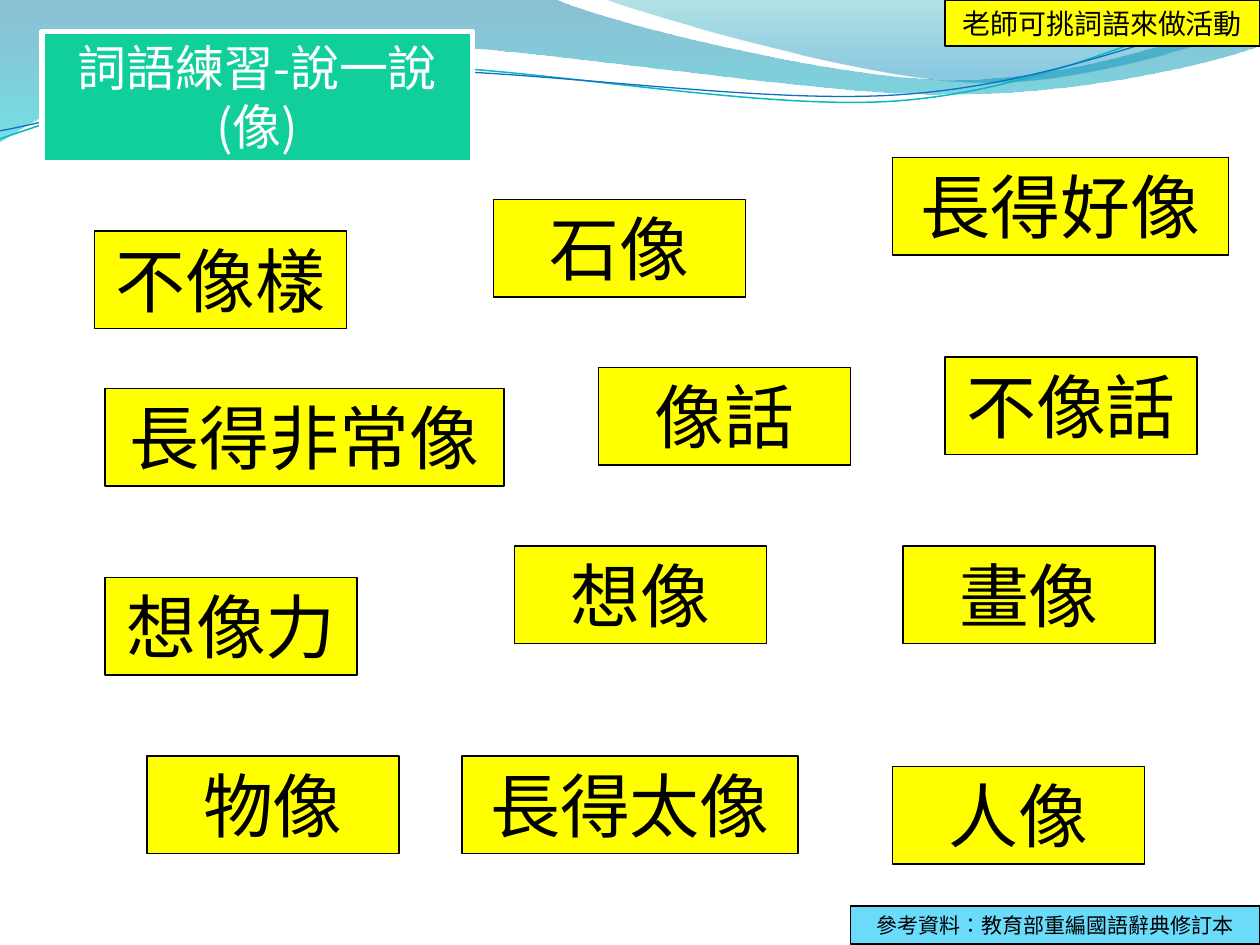
from lxml.etree import SubElement
from pptx import Presentation
from pptx.dml.color import RGBColor
from pptx.enum.shapes import MSO_SHAPE
from pptx.enum.text import MSO_ANCHOR, MSO_AUTO_SIZE, PP_ALIGN
from pptx.oxml.ns import qn
from pptx.util import Pt

PX = 7620
FONT = "Noto Sans CJK SC"


def rgb(value):
    return RGBColor.from_string(value)


class SlideBuilder:
    def __init__(self, prs):
        self.s = prs.slides.add_slide(prs.slide_layouts[6])
        self.frame = dict(word_wrap=True, vertical_anchor=MSO_ANCHOR.TOP,
                          auto_size=MSO_AUTO_SIZE.SHAPE_TO_FIT_TEXT)

    def outline(self, start, segments, close):
        fb = self.s.shapes.build_freeform(*start, scale=PX)
        fb.add_line_segments([pt for seg in segments for pt in seg], close=close)
        sp = fb.convert_to_shape()
        sp.shadow.inherit = False
        lines = iter(list(sp._element.iter(qn("a:lnTo"))))
        for seg in segments:
            steps = [next(lines) for _ in seg]
            if len(steps) == 3:
                first = steps[0]
                first.tag = qn("a:cubicBezTo")
                for step in steps[1:]:
                    first.append(step[0])
                    step.getparent().remove(step)
        return sp

    def wave(self, start, segments, stops):
        sp = self.outline(start, segments, True)
        sp.line.fill.background()
        sp.fill.gradient()
        sp.fill.gradient_angle = 270
        for stop, (position, color, alpha) in zip(sp.fill.gradient_stops, stops):
            stop.position = position
            stop.color.rgb = rgb(color)
            SubElement(stop._gs.find(qn("a:srgbClr")), qn("a:alpha"),
                       val=str(alpha * 1000))

    def strand(self, start, segments, color, width):
        sp = self.outline(start, segments, False)
        sp.fill.background()
        sp.line.color.rgb = rgb(color)
        sp.line.width = Pt(width)

    def box(self, text, x, y, w, h, size, fill="FFFF00", color="000000",
            line="000000", line_width=0.75):
        sp = self.s.shapes.add_shape(
            MSO_SHAPE.RECTANGLE, *(v * PX for v in (x, y, w, h)))
        sp.shadow.inherit = False
        sp.fill.solid()
        sp.fill.fore_color.rgb = rgb(fill)
        sp.line.color.rgb = rgb(line)
        sp.line.width = Pt(line_width)
        tf = sp.text_frame
        for name, value in self.frame.items():
            setattr(tf, name, value)
        p = tf.paragraphs[0]
        p.alignment = PP_ALIGN.CENTER
        r = p.add_run()
        r.text = text
        for name, value in dict(name=FONT, size=Pt(size)).items():
            setattr(r.font, name, value)
        r.font.color.rgb = rgb(color)
        props = r._r.get_or_add_rPr()
        props.set("lang", "zh-TW")
        SubElement(props, qn("a:ea"), typeface=FONT)


def main():
    prs = Presentation()
    prs.slide_width, prs.slide_height = 1200 * PX, 900 * PX
    b = SlideBuilder(prs)

    b.wave((0, 0), [
        [(528, -1)],
        [(571, 20), (797, 76), (910, 76)],
        [(1024, 76), (1150, 31), (1200, 11)],
        [(1201, 43)],
        [(1180, 53), (1044, 91), (895, 90)],
        [(746, 90), (458, 34), (308, 41)],
        [(155, 43), (55, 100), (-1, 136)],
    ], [(0, "0074A1", 45), (1, "00C6CF", 55)])
    b.wave((575, -1), [
        [(611, 13), (818, 74), (923, 78)],
        [(1027, 83), (1153, 38), (1200, 25)],
        [(1200, 0)],
    ], [(0, "00A1A9", 30), (0.8, "008BBF", 45)])
    b.strand((-2, 133), [
        [(58, 112), (190, 68), (332, 62)],
        [(474, 56), (712, 107), (856, 96)],
        [(1000, 85), (1126, 18), (1198, -2)],
    ], "0AB8BF", 0.85)
    b.strand((-2, 125), [
        [(56, 115), (197, 73), (340, 67)],
        [(484, 61), (716, 101), (860, 90)],
        [(1003, 80), (1129, 25), (1200, 7)],
    ], "0F6FC6", 0.75)

    b.box("詞語練習-說一說(像)", 40, 30, 410, 125, 28,
          fill="10CF9B", color="FFFFFF", line="FFFFFF", line_width=3)
    b.box("老師可挑詞語來做活動", 900, 0, 300, 44, 16)

    words = [
        ("不像話", 900, 340), ("像話", 570, 350), ("想像力", 100, 550),
        ("想像", 490, 520), ("畫像", 860, 520), ("不像樣", 90, 220),
        ("人像", 850, 730), ("物像", 140, 720), ("石像", 470, 190),
        ("長得太像", 440, 720), ("長得好像", 850, 150), ("長得非常像", 100, 370),
    ]
    widths = {4: 320, 5: 380}
    for word, x, y in words:
        b.box(word, x, y, widths.get(len(word), 240), 93, 40)

    b.box("參考資料：教育部重編國語辭典修訂本", 810, 863, 390, 36, 12, fill="6BDBFA")
    prs.save("out.pptx")


if __name__ == "__main__":
    main()
